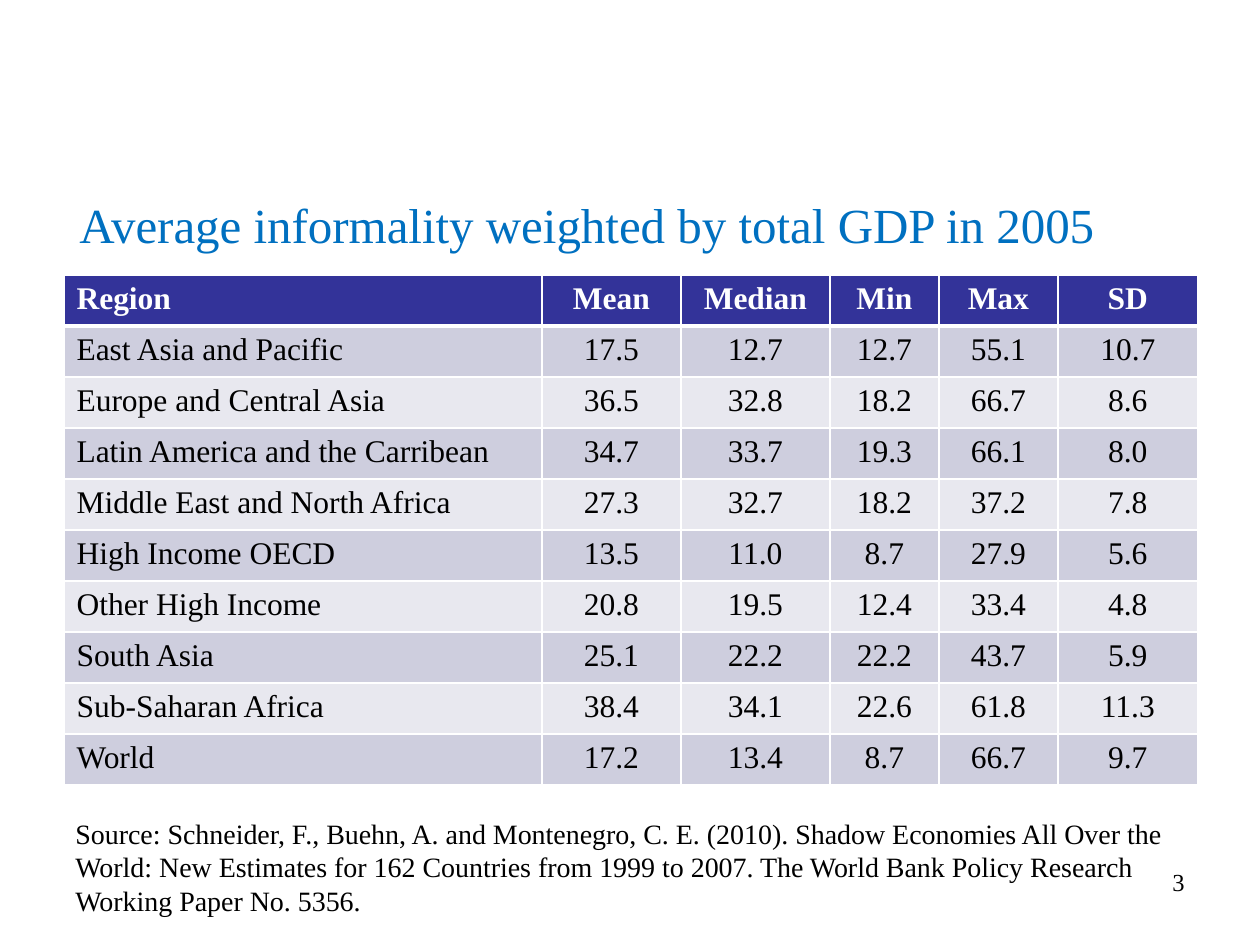
from lxml import etree
from pptx import Presentation, util as u
from pptx.dml.color import RGBColor
from pptx.enum import text as t
from pptx.oxml.ns import qn

PX = 914400 / 126
FONT = "Times New Roman"
LEFT, CENTER, RIGHT = t.PP_ALIGN.LEFT, t.PP_ALIGN.CENTER, t.PP_ALIGN.RIGHT


def px(n):
    return u.Emu(round(n * PX))


def write(frame, words, size, color, align=LEFT, bold=False):
    paragraph = frame.paragraphs[0]
    paragraph.text = words
    paragraph.alignment = align
    formats = {"name": FONT, "size": u.Pt(size), "bold": bold}
    for key, value in formats.items():
        setattr(paragraph.font, key, value)
    paragraph.font.color.rgb = RGBColor.from_string(color)


prs = Presentation()
prs.slide_width, prs.slide_height = px(1260), px(945)
slide = prs.slides.add_slide(prs.slide_layouts[6])

# Title, page number and source note
source = ("Source: Schneider, F., Buehn, A. and Montenegro, C. E. (2010). "
          "Shadow Economies All Over the World: New Estimates for 162 Countries "
          "from 1999 to 2007. The World Bank Policy Research Working Paper No. 5356.")
captions = [
    ((67, 145, 1134, 157), "Average informality weighted by total GDP in 2005",
     28, "0070C0", LEFT, t.MSO_ANCHOR.MIDDLE),
    ((903, 861, 294, 65), "3", 14, "000000", RIGHT, t.MSO_ANCHOR.TOP),
    ((63, 810, 1134, 115), source, 16, "000000", LEFT, t.MSO_ANCHOR.TOP),
]
for place, words, size, color, align, anchor in captions:
    frame = slide.shapes.add_textbox(*map(px, place)).text_frame
    frame.word_wrap = True
    frame.vertical_anchor = anchor
    write(frame, words, size, color, align)

# Informality by region
regions = [
    ("Region", "Mean", "Median", "Min", "Max", "SD"),
    ("East Asia and Pacific", "17.5", "12.7", "12.7", "55.1", "10.7"),
    ("Europe and Central Asia", "36.5", "32.8", "18.2", "66.7", "8.6"),
    ("Latin America and the Carribean", "34.7", "33.7", "19.3", "66.1", "8.0"),
    ("Middle East and North Africa", "27.3", "32.7", "18.2", "37.2", "7.8"),
    ("High Income OECD", "13.5", "11.0", "8.7", "27.9", "5.6"),
    ("Other High Income", "20.8", "19.5", "12.4", "33.4", "4.8"),
    ("South Asia", "25.1", "22.2", "22.2", "43.7", "5.9"),
    ("Sub-Saharan Africa", "38.4", "34.1", "22.6", "61.8", "11.3"),
    ("World", "17.2", "13.4", "8.7", "66.7", "9.7"),
]
widths = [478, 139, 149, 109, 119, 140]
row_height = 51
table = slide.shapes.add_table(
    len(regions), len(widths), px(64), px(275),
    px(sum(widths)), px(row_height * len(regions))).table
for column, width in zip(table.columns, widths):
    column.width = px(width)

for r, values in enumerate(regions):
    table.rows[r].height = px(row_height)
    header = r == 0
    fill = "333399" if header else ("E8E8EF", "CECEDE")[r % 2]
    for c, value in enumerate(values):
        cell = table.cell(r, c)
        write(cell.text_frame, value, 18, "FFFFFF" if header else "000000",
              CENTER if c else LEFT, header)
        borders = {"L": 1, "R": 1, "T": 3 if r == 1 else 1, "B": 3 if header else 1}
        for side, points in borders.items():
            line = etree.SubElement(cell._tc.get_or_add_tcPr(), qn("a:ln" + side),
                                    w=str(u.Pt(points)))
            paint = etree.SubElement(line, qn("a:solidFill"))
            etree.SubElement(paint, qn("a:srgbClr"), val="FFFFFF")
        cell.fill.solid()
        cell.fill.fore_color.rgb = RGBColor.from_string(fill)

prs.save("out.pptx")
